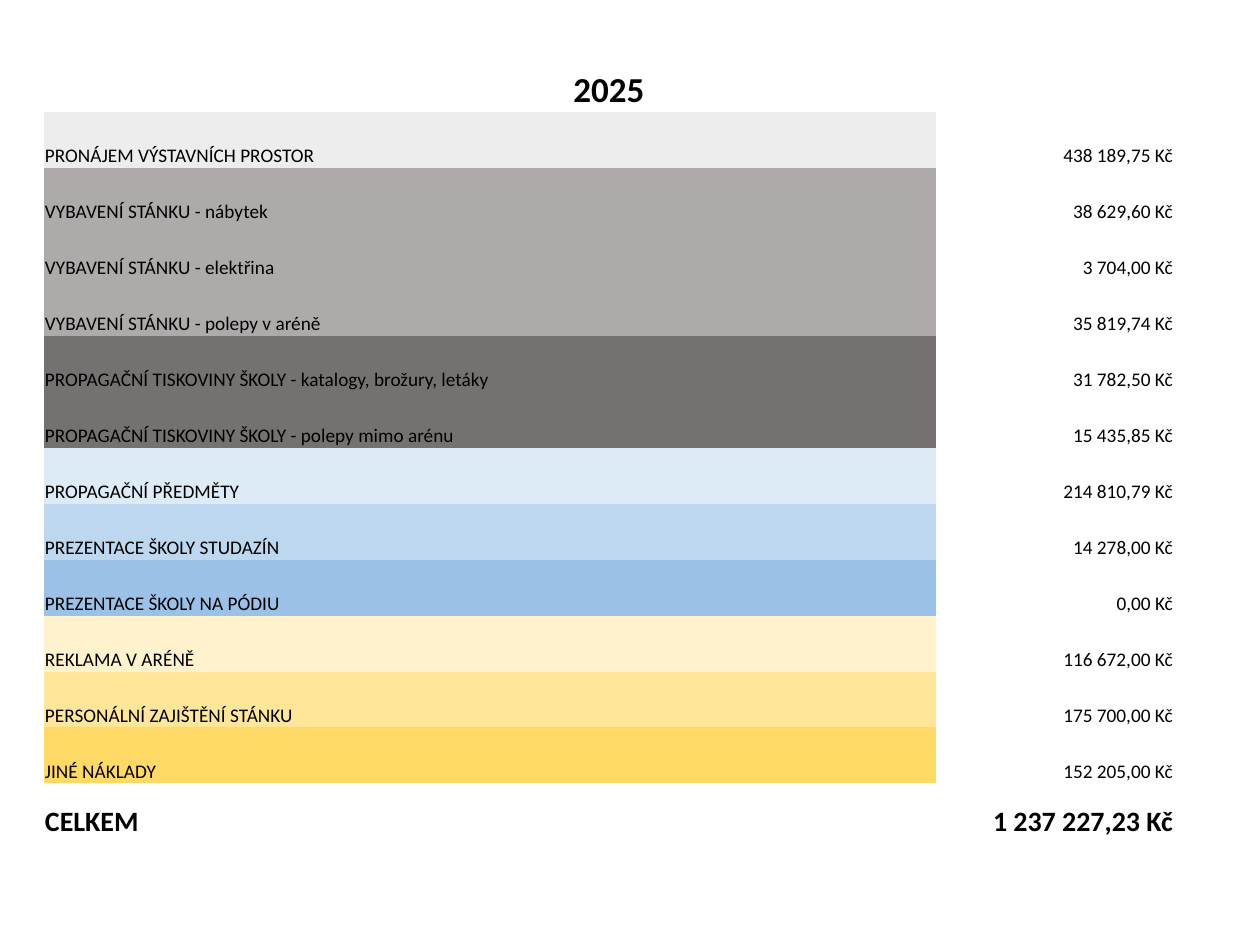
from pptx import Presentation
from pptx.dml.color import RGBColor
from pptx.enum.text import MSO_ANCHOR, PP_ALIGN
from pptx.util import Inches, Pt

PX = Inches(1) / 126
YEAR = "2025"
COSTS = [
    ("PRONÁJEM VÝSTAVNÍCH PROSTOR", "438 189,75 Kč", "EDEDED"),
    ("VYBAVENÍ STÁNKU - nábytek", "38 629,60 Kč", "AEAAAA"),
    ("VYBAVENÍ STÁNKU - elektřina", "3 704,00 Kč", "AEAAAA"),
    ("VYBAVENÍ STÁNKU - polepy v aréně", "35 819,74 Kč", "AEAAAA"),
    ("PROPAGAČNÍ TISKOVINY ŠKOLY - katalogy, brožury, letáky", "31 782,50 Kč", "757171"),
    ("PROPAGAČNÍ TISKOVINY ŠKOLY - polepy mimo arénu", "15 435,85 Kč", "757171"),
    ("PROPAGAČNÍ PŘEDMĚTY", "214 810,79 Kč", "DDEBF7"),
    ("PREZENTACE ŠKOLY STUDAZÍN", "14 278,00 Kč", "BDD7EE"),
    ("PREZENTACE ŠKOLY NA PÓDIU", "0,00 Kč", "9BC2E6"),
    ("REKLAMA V ARÉNĚ", "116 672,00 Kč", "FFF2CC"),
    ("PERSONÁLNÍ ZAJIŠTĚNÍ STÁNKU", "175 700,00 Kč", "FFE699"),
    ("JINÉ NÁKLADY", "152 205,00 Kč", "FFD966"),
]
TOTAL = ("CELKEM", "1 237 227,23 Kč", None)
LEFT, TOP = 44, 68
COLS = [892, 238]
ROWS = [44] + [56] * (len(COSTS) + 1)


def px(n):
    return round(n * PX)


def color(code):
    return RGBColor.from_string(code)


def write(cell, text, align, size=11, bold=False, fill=None):
    cell.margin_left = cell.margin_right = cell.margin_top = px(1)
    cell.margin_bottom = 0
    cell.vertical_anchor = MSO_ANCHOR.BOTTOM
    if fill:
        cell.fill.solid()
        cell.fill.fore_color.rgb = color(fill)
    else:
        cell.fill.background()
    cell.text_frame.text = text
    para = cell.text_frame.paragraphs[0]
    para.alignment = align
    font = para.runs[0].font
    font.name, font.size, font.bold = "Calibri", Pt(size), bold
    font.color.rgb = color("000000")


def main():
    prs = Presentation()
    prs.slide_width, prs.slide_height = Inches(10), Inches(7.5)
    slide = prs.slides.add_slide(prs.slide_layouts[6])
    frame = slide.shapes.add_table(
        len(ROWS), len(COLS), px(LEFT), px(TOP), px(sum(COLS)), px(sum(ROWS)))
    table = frame.table
    table.first_row = table.horz_banding = False
    for col, width in zip(table.columns, COLS):
        col.width = px(width)
    for row, height in zip(table.rows, ROWS):
        row.height = px(height)

    head = table.cell(0, 0)
    head.merge(table.cell(0, 1))
    write(head, YEAR, PP_ALIGN.CENTER, 20, True)
    for i, (label, price, fill) in enumerate(COSTS + [TOTAL], 1):
        size, bold = (11, False) if fill else (16, True)
        write(table.cell(i, 0), label, PP_ALIGN.LEFT, size, bold, fill)
        write(table.cell(i, 1), price, PP_ALIGN.RIGHT, size, bold)
    # The plain style without grid lines
    style = frame._element.xpath(".//a:tableStyleId")[0]
    style.text = "{2D5ABB26-0587-4C30-8999-92F81FD0307C}"
    prs.save("out.pptx")


if __name__ == "__main__":
    main()
